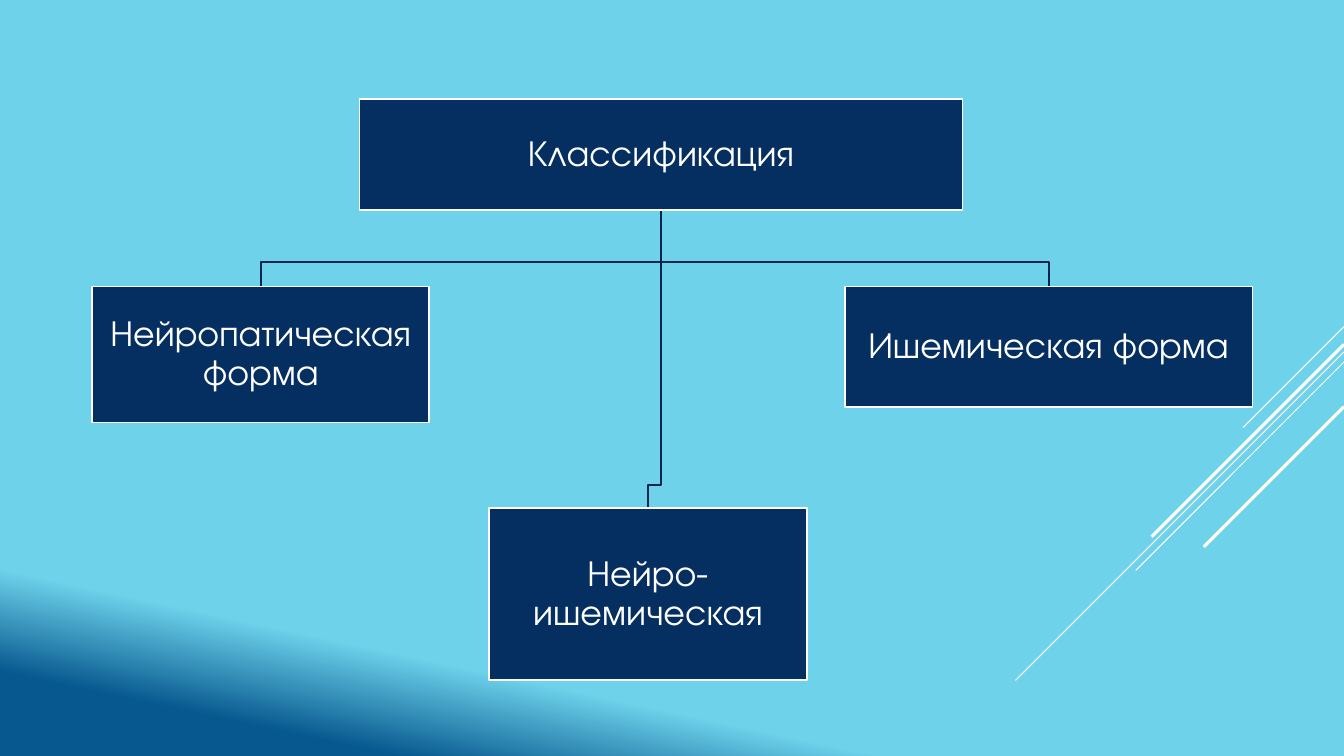
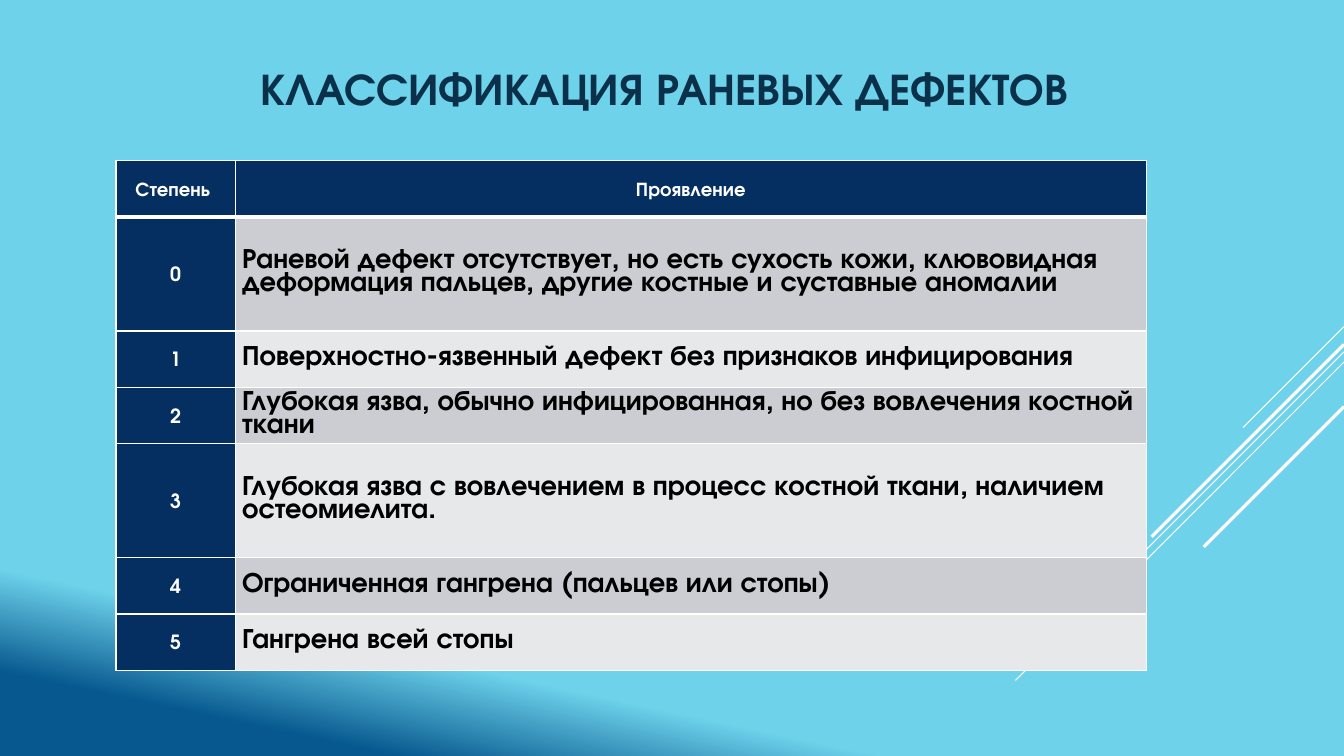
from dataclasses import dataclass
from itertools import product
from typing import Any

from lxml.etree import SubElement
from pptx import Presentation
from pptx.dml.color import RGBColor
from pptx.enum.shapes import MSO_CONNECTOR as Connector, MSO_SHAPE as Preset
from pptx.enum.text import MSO_ANCHOR as Anchor, MSO_AUTO_SIZE as AutoSize, PP_ALIGN as Align
from pptx.oxml.ns import qn
from pptx.util import Inches, Pt

COLUMNS, ROWS = 160, 90
SLIDE_WIDTH, SLIDE_HEIGHT = Inches(13.33), Inches(7.5)
FONT = "TeX Gyre Adventor"
SKY, DEEP_BLUE, NAVY = "6ED2EB", "06588E", "052F61"
TITLE_INK, BRANCH_INK = "0A304A", "04264E"
WHITE, BLACK = "FFFFFF", "000000"
BANDS = ("CCCDD2", "E7E8EA")
BRANCH_DROP = 2.8


@dataclass(frozen=True)
class Box:
    column: float
    row: float
    width: float
    height: float

    @property
    def center(self) -> float:
        return self.column + self.width / 2

    @property
    def bottom(self) -> float:
        return self.row + self.height

    def frame(self) -> tuple[int, int, int, int]:
        return across(self.column), down(self.row), across(self.width), down(self.height)


@dataclass(frozen=True)
class Node:
    text: str
    box: Box


@dataclass(frozen=True)
class Ray:
    row: float
    reach: float
    weight: float


@dataclass(frozen=True)
class Grade:
    label: str
    finding: str
    height: float


RAYS = (
    Ray(38.9, 12, 0.75),
    Ray(41.9, 39.1, 0.75),
    Ray(43.1, 24.8, 0.75),
    Ray(41, 22.9, 2.25),
    Ray(48.4, 16.7, 2.25),
)
ROOT = Node("Классификация", Box(42.8, 11.8, 71.8, 13.2))
FORMS = (
    Node("Нейропатическая форма", Box(11, 34.1, 40.1, 16.2)),
    Node("Нейро-ишемическая", Box(58.2, 60.5, 37.9, 20.5)),
    Node("Ишемическая форма", Box(100.6, 34.1, 48.5, 14.4)),
)
TITLE_BOX = Box(3.5, 3.5, 151.2, 19.8)
TABLE_COLUMNS = (14.2, 108.5)
SINGLE, DOUBLE = 6.7, 13.6
GRADES = (
    Grade("Степень ", "Проявление", SINGLE),
    Grade("0", "Раневой дефект отсутствует, но есть сухость кожи, клювовидная "
          "деформация пальцев, другие костные и суставные аномалии", DOUBLE),
    Grade("1", "Поверхностно-язвенный дефект без признаков инфицирования", SINGLE),
    Grade("2", "Глубокая язва, обычно инфицированная, но без вовлечения костной ткани", SINGLE),
    Grade("3", "Глубокая язва с вовлечением в процесс костной ткани, "
          "наличием остеомиелита.", DOUBLE),
    Grade("4", "Ограниченная гангрена (пальцев или стопы)", SINGLE),
    Grade("5", "Гангрена всей стопы", SINGLE),
)
TABLE_BOX = Box(13.8, 19.1, sum(TABLE_COLUMNS), sum(grade.height for grade in GRADES))


def across(columns: float) -> int:
    return round(SLIDE_WIDTH * columns / COLUMNS)


def down(rows: float) -> int:
    return round(SLIDE_HEIGHT * rows / ROWS)


def color(value: str) -> RGBColor:
    return RGBColor.from_string(value)


def apply_format(target: Any, values: dict[str, Any]) -> None:
    for name, value in values.items():
        setattr(target, name, value)


def set_fill(target: Any, value: str) -> None:
    target.fill.solid()
    target.fill.fore_color.rgb = color(value)


def set_line(shape: Any, value: str, weight: float) -> None:
    shape.line.color.rgb = color(value)
    shape.line.width = Pt(weight)


def write(frame: Any, text: str, size: float, ink: str, bold: bool, paragraph_format: dict[str, Any]) -> None:
    paragraph = frame.paragraphs[0]
    apply_format(paragraph, paragraph_format)
    run = paragraph.add_run()
    run.text = text
    apply_format(run.font, {"name": FONT, "size": Pt(size), "bold": bold})
    run.font.color.rgb = color(ink)


def paint_background(master: Any) -> None:
    fill = master.background.fill
    fill.gradient()
    fill.gradient_angle = 258
    for stop, (position, value) in zip(fill.gradient_stops, ((0.82, SKY), (0.92, DEEP_BLUE))):
        stop.position = position
        stop.color.rgb = color(value)


def draw_ray(slide: Any, ray: Ray) -> None:
    line = slide.shapes.add_connector(
        Connector.STRAIGHT, across(COLUMNS), down(ray.row),
        across(COLUMNS - ray.reach), down(ray.row + ray.reach))
    set_line(line, WHITE, ray.weight)
    SubElement(line.element.spPr, qn("a:effectLst"))


def add_slide(presentation: Any, layout: int) -> Any:
    slide = presentation.slides.add_slide(presentation.slide_layouts[layout])
    for ray in RAYS:
        draw_ray(slide, ray)
    return slide


def draw_branch(slide: Any, parent: Box, child: Box) -> None:
    bus = child.row - BRANCH_DROP if child.row > 50 else parent.bottom + 6.2
    points = ((parent.center, bus), (child.center, bus), (child.center, child.row))
    builder = slide.shapes.build_freeform(across(parent.center), down(parent.bottom))
    builder.add_line_segments([(across(x), down(y)) for x, y in points], close=False)
    branch = builder.convert_to_shape()
    branch.fill.background()
    branch.shadow.inherit = False
    set_line(branch, BRANCH_INK, 1.25)


def draw_node(slide: Any, node: Node) -> None:
    shape = slide.shapes.add_shape(Preset.RECTANGLE, *node.box.frame())
    shape.shadow.inherit = False
    set_fill(shape, NAVY)
    set_line(shape, WHITE, 1.25)
    margins = {f"margin_{side}": Inches(0.02) for side in ("left", "top", "right", "bottom")}
    apply_format(shape.text_frame, {"word_wrap": True, "vertical_anchor": Anchor.MIDDLE, **margins})
    write(shape.text_frame, node.text, 26, WHITE, False,
          {"alignment": Align.CENTER, "line_spacing": 0.9})


def set_title(slide: Any, text: str) -> None:
    title = slide.shapes.title
    apply_format(title, dict(zip(("left", "top", "width", "height"), TITLE_BOX.frame())))
    apply_format(title.text_frame, {
        "word_wrap": True, "auto_size": AutoSize.NONE,
        "vertical_anchor": Anchor.MIDDLE, "margin_bottom": Inches(0.54)})
    write(title.text_frame, text, 32, TITLE_INK, True, {"alignment": Align.CENTER})


def set_borders(cell: Any, weights: dict[str, float]) -> None:
    properties = cell._tc.get_or_add_tcPr()
    for side, weight in weights.items():
        border = SubElement(properties, qn(f"a:ln{side}"), w=str(Pt(weight)))
        SubElement(SubElement(border, qn("a:solidFill")), qn("a:srgbClr"), val=WHITE)


def format_cell(cell: Any, text: str, row: int, column: int) -> None:
    finding = row > 0 and column > 0
    set_borders(cell, {"L": 1, "R": 1, "T": 3 if row == 1 else 1, "B": 3 if row == 0 else 1})
    set_fill(cell, BANDS[(row - 1) % 2] if finding else NAVY)
    apply_format(cell, {
        "vertical_anchor": Anchor.MIDDLE, "margin_left": Inches(0.07),
        "margin_right": Inches(0.07), "margin_top": 0, "margin_bottom": 0})
    write(cell.text_frame, text, 20 if finding else 14, BLACK if finding else WHITE, True,
          {"alignment": Align.LEFT if finding else Align.CENTER, "line_spacing": Pt(16.5)})


def draw_table(slide: Any) -> None:
    table = slide.shapes.add_table(len(GRADES), len(TABLE_COLUMNS), *TABLE_BOX.frame()).table
    for column, width in zip(table.columns, TABLE_COLUMNS):
        column.width = across(width)
    for row, grade in zip(table.rows, GRADES):
        row.height = down(grade.height)
    for row, column in product(range(len(GRADES)), range(len(TABLE_COLUMNS))):
        grade = GRADES[row]
        format_cell(table.cell(row, column), (grade.label, grade.finding)[column], row, column)


def build_forms_slide(presentation: Any) -> None:
    slide = add_slide(presentation, 6)
    for form in reversed(FORMS):
        draw_branch(slide, ROOT.box, form.box)
    for node in (ROOT, *FORMS):
        draw_node(slide, node)


def build_grades_slide(presentation: Any) -> None:
    slide = add_slide(presentation, 5)
    set_title(slide, "КЛАССИФИКАЦИЯ РАНЕВЫХ ДЕФЕКТОВ")
    draw_table(slide)


def main() -> None:
    presentation = Presentation()
    apply_format(presentation, {"slide_width": SLIDE_WIDTH, "slide_height": SLIDE_HEIGHT})
    paint_background(presentation.slide_master)
    build_forms_slide(presentation)
    build_grades_slide(presentation)
    presentation.save("out.pptx")


if __name__ == "__main__":
    main()
